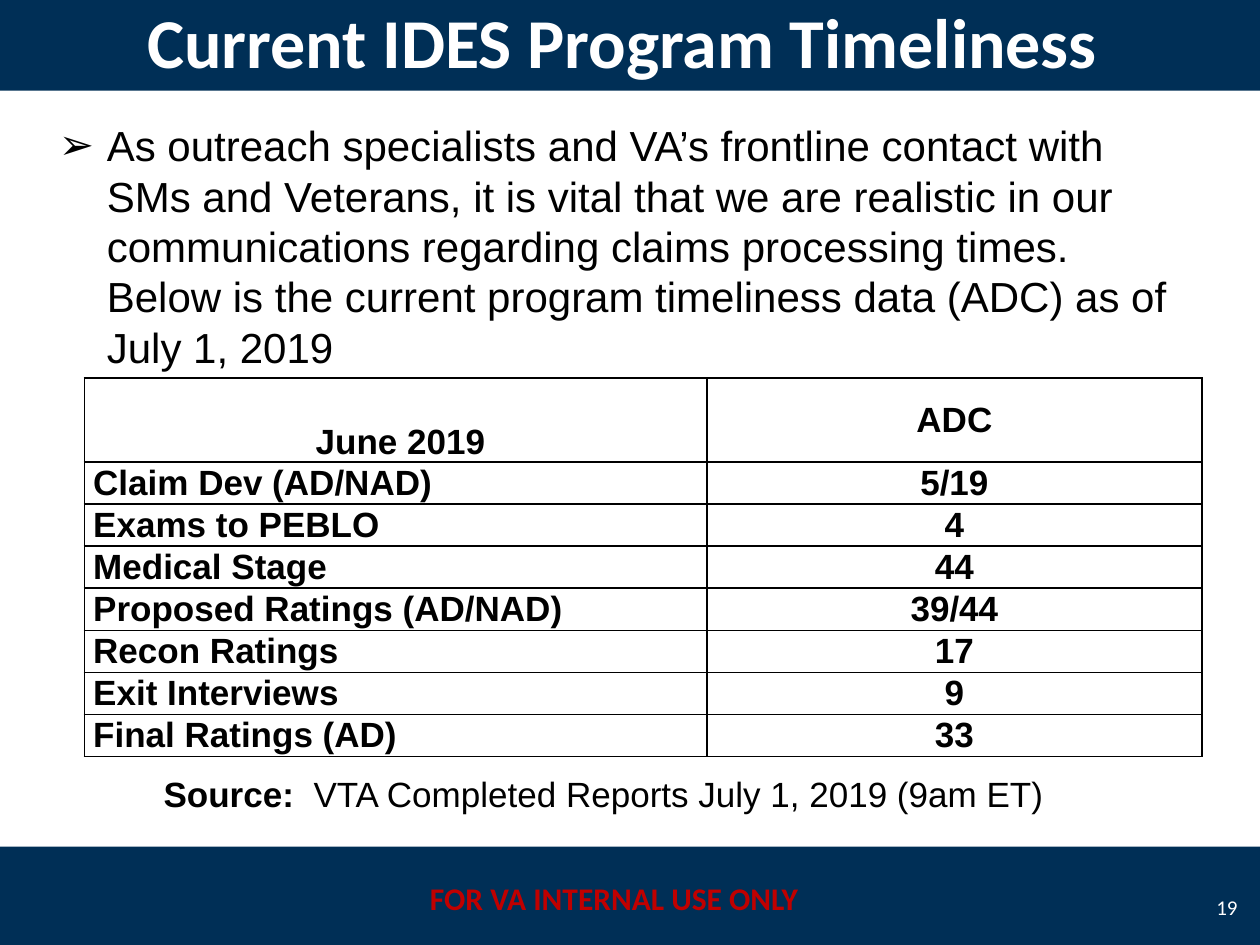
"""Build the IDES program timeliness slide."""
from dataclasses import dataclass

from lxml.etree import SubElement
from pptx import Presentation
from pptx.dml.color import RGBColor
from pptx.enum.shapes import MSO_SHAPE
from pptx.enum.text import MSO_ANCHOR, PP_ALIGN
from pptx.oxml import parse_xml
from pptx.oxml.ns import nsdecls, qn
from pptx.util import Inches, Pt

NAVY = RGBColor(0x00, 0x2F, 0x56)
RED = RGBColor(0xC0, 0x00, 0x00)
WHITE = RGBColor(0xFF, 0xFF, 0xFF)
BLACK = RGBColor(0x00, 0x00, 0x00)


@dataclass(frozen=True)
class Style:
    size: int
    color: RGBColor = BLACK
    font: str = "Arial"
    bold: bool = False
    align: PP_ALIGN = PP_ALIGN.LEFT


@dataclass(frozen=True)
class Label:
    text: str
    box: tuple[float, float, float, float]
    style: Style
    anchor: MSO_ANCHOR = MSO_ANCHOR.MIDDLE
    wrap: bool = True


@dataclass(frozen=True)
class Stage:
    name: str
    adc: str


BANDS = [(0, 6.72, 10, 0.8), (0, -0.08, 10, 0.8)]
FOOTER = Label("FOR VA INTERNAL USE ONLY", (3.25, 6.93, 3.25, 0.4),
               Style(18, RED, "Calibri", True, PP_ALIGN.CENTER), MSO_ANCHOR.TOP)
PAGE = Label("19", (9.5, 7, 0.42, 0.4), Style(12, WHITE, "Calibri", align=PP_ALIGN.RIGHT))
TITLE = Label("Current IDES Program Timeliness ", BANDS[1],
              Style(40, WHITE, "Calibri", True, PP_ALIGN.CENTER))
INTRO = Label(
    "As outreach specialists and VA’s frontline contact with SMs and Veterans, it is vital "
    "that we are realistic in our communications regarding claims processing times.  Below "
    "is the current program timeliness data (ADC) as of July 1, 2019",
    (0.37, 0.9, 9.17, 2.12), Style(24), MSO_ANCHOR.TOP)
SOURCE = Label("Source:", (1.2, 6.08, 7.47, 0.44), Style(20, bold=True), wrap=False)
SOURCE_DETAIL = "  VTA Completed Reports July 1, 2019 (9am ET)"
STAGES = [
    Stage(" June 2019", "ADC"),
    Stage("Claim Dev (AD/NAD)", "5/19"),
    Stage("Exams to PEBLO", "4"),
    Stage("Medical Stage", "44"),
    Stage("Proposed Ratings (AD/NAD)", "39/44"),
    Stage("Recon Ratings", "17"),
    Stage("Exit Interviews", "9"),
    Stage("Final Ratings (AD)", "33"),
]


def format_text(tf, style: Style) -> None:
    """Apply a style to every run of a text frame."""
    for p in tf.paragraphs:
        p.alignment = style.align
        for r in p.runs:
            r.font.name = style.font
            r.font.size = Pt(style.size)
            r.font.bold = style.bold
            r.font.color.rgb = style.color


def add_band(s, box: tuple[float, float, float, float]) -> None:
    """Draw a plain navy band."""
    sp = s.shapes.add_shape(MSO_SHAPE.RECTANGLE, *map(Inches, box))
    sp.shadow.inherit = False
    sp.fill.solid()
    sp.fill.fore_color.rgb = NAVY
    sp.line.fill.background()


def add_label(s, label: Label):
    """Draw a text box and return its text frame."""
    tf = s.shapes.add_textbox(*map(Inches, label.box)).text_frame
    tf.text = label.text
    tf.word_wrap = label.wrap
    tf.vertical_anchor = label.anchor
    format_text(tf, label.style)
    return tf


def add_bullet(p, char: str, indent: float) -> None:
    """Give a paragraph a hanging bullet."""
    pPr = p._p.get_or_add_pPr()
    pPr.set("marL", str(Inches(indent)))
    pPr.set("indent", str(-Inches(indent)))
    SubElement(pPr, qn("a:buFont"), typeface="Arial")
    SubElement(pPr, qn("a:buChar"), char=char)


def style_cell(cell, text: str, align: PP_ALIGN, anchor: MSO_ANCHOR) -> None:
    """Fill one table cell and outline it in black."""
    cell.text_frame.text = text
    cell.vertical_anchor = anchor
    cell.margin_left = cell.margin_right = Inches(0.07)
    cell.margin_top = cell.margin_bottom = 0
    format_text(cell.text_frame, Style(20, bold=True, align=align))
    tcPr = cell._tc.get_or_add_tcPr()
    for side in ("lnL", "lnR", "lnT", "lnB"):
        tcPr.append(parse_xml(
            f'<a:{side} {nsdecls("a")} w="{Pt(1)}"><a:solidFill>'
            f'<a:srgbClr val="{BLACK}"/></a:solidFill></a:{side}>'))
    cell.fill.background()


def add_stage_table(s, stages: list[Stage]) -> None:
    """Draw the timeliness table with a double-height header row."""
    row_height = Inches(3 / (len(stages) + 1))
    table = s.shapes.add_table(len(stages), 2, Inches(0.67), Inches(3),
                               Inches(8.87), Inches(3)).table
    table.first_row = table.horz_banding = False
    for column, width in zip(table.columns, (4.94, 3.93)):
        column.width = Inches(width)
    for i, stage in enumerate(stages):
        header = i == 0
        table.rows[i].height = row_height * (2 if header else 1)
        style_cell(table.cell(i, 0), stage.name,
                   PP_ALIGN.CENTER if header else PP_ALIGN.LEFT,
                   MSO_ANCHOR.BOTTOM if header else MSO_ANCHOR.MIDDLE)
        style_cell(table.cell(i, 1), stage.adc, PP_ALIGN.CENTER, MSO_ANCHOR.MIDDLE)


def main() -> None:
    """Assemble and save the slide."""
    prs = Presentation()
    prs.slide_width, prs.slide_height = Inches(10), Inches(7.5)
    s = prs.slides.add_slide(prs.slide_layouts[6])
    for box in BANDS:
        add_band(s, box)
    for label in (FOOTER, PAGE, TITLE):
        add_label(s, label)
    add_bullet(add_label(s, INTRO).paragraphs[0], "➢", 0.38)
    add_stage_table(s, STAGES)
    tf = add_label(s, SOURCE)
    r = tf.paragraphs[0].add_run()
    r.text = SOURCE_DETAIL
    format_text(tf, SOURCE.style)
    r.font.bold = False
    prs.save("out.pptx")


if __name__ == "__main__":
    main()
